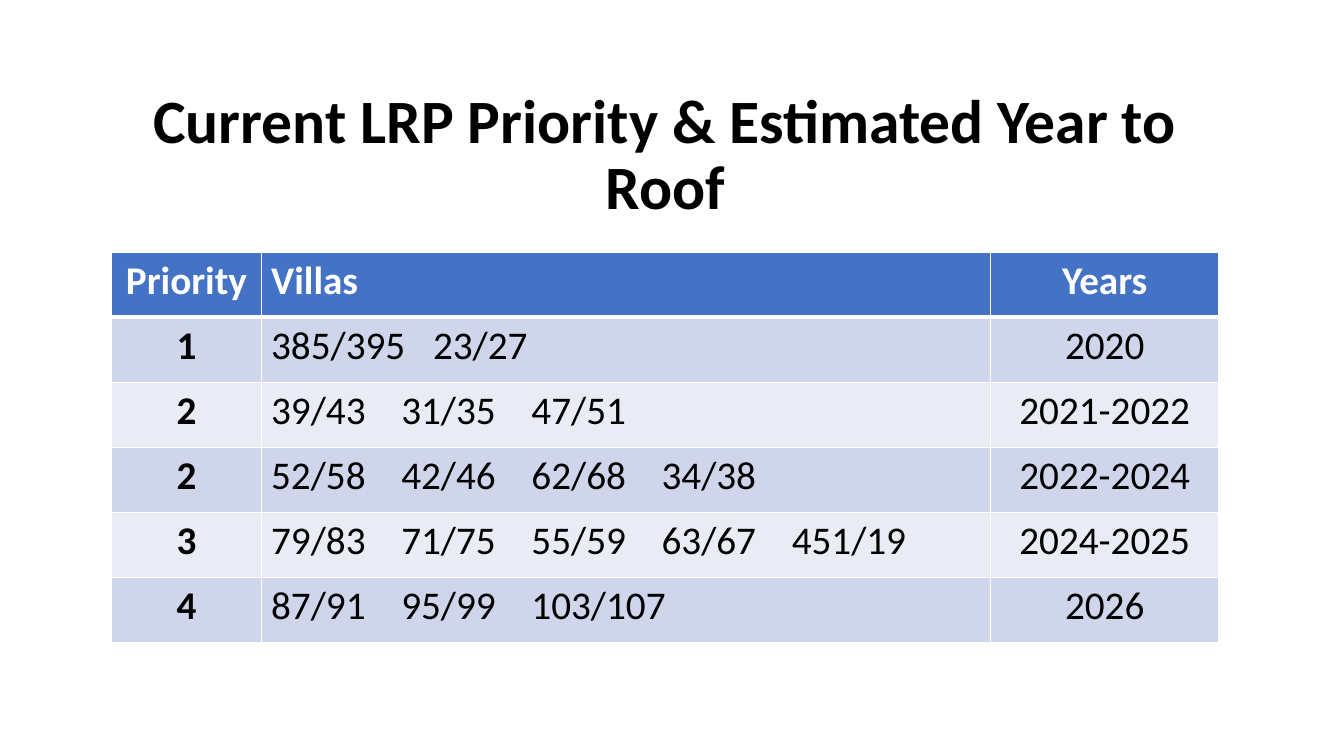
import dataclasses

import lxml.etree
import pptx
import pptx.dml.color
import pptx.enum.text
import pptx.oxml.ns
import pptx.table
import pptx.text.text
import pptx.util

Cm = pptx.util.Cm
Pt = pptx.util.Pt
ALIGN = pptx.enum.text.PP_ALIGN

FONT = "Calibri"
COLOURS = {
    "text": "000000",
    "white": "FFFFFF",
    "header": "4472C4",
    "odd row": "CFD5EA",
    "even row": "E9EBF5",
}
COLUMN_WIDTHS = (3.76, 18.39, 5.74)
ROW_HEIGHT = 1.64
VILLA_STEP = 3.28


@dataclasses.dataclass
class PriorityRow:
    priority: str
    villas: tuple[str, ...]
    years: str
    villa_step: float = VILLA_STEP


ROWS = (
    PriorityRow("Priority", ("Villas",), "Years"),
    PriorityRow("1", ("385/395", "23/27"), "2020", 4.08),
    PriorityRow("2", ("39/43", "31/35", "47/51"), "2021-2022"),
    PriorityRow("2", ("52/58", "42/46", "62/68", "34/38"), "2022-2024"),
    PriorityRow("3", ("79/83", "71/75", "55/59", "63/67", "451/19"), "2024-2025"),
    PriorityRow("4", ("87/91", "95/99", "103/107"), "2026"),
)


def rgb(name: str) -> pptx.dml.color.RGBColor:
    return pptx.dml.color.RGBColor.from_string(COLOURS[name])


def add_element(parent: lxml.etree._Element, tag: str, **attributes: str) -> lxml.etree._Element:
    element = lxml.etree.SubElement(parent, pptx.oxml.ns.qn(tag))
    for key, value in attributes.items():
        element.set(key, value)
    return element


def format_paragraph(paragraph: pptx.text.text._Paragraph, size: float, colour: str,
                     bold: bool, alignment: ALIGN) -> None:
    paragraph.alignment = alignment
    paragraph.font.name = FONT
    paragraph.font.size = Pt(size)
    paragraph.font.bold = bold
    paragraph.font.color.rgb = rgb(colour)


def set_borders(cell: pptx.table._Cell, top: float, bottom: float) -> None:
    properties = cell._tc.get_or_add_tcPr()
    for side, width in (("L", 1), ("R", 1), ("T", top), ("B", bottom)):
        line = add_element(properties, f"a:ln{side}", w=str(Pt(width)))
        add_element(add_element(line, "a:solidFill"), "a:srgbClr", val=COLOURS["white"])


def set_tab_stops(paragraph: pptx.text.text._Paragraph, count: int, step: float) -> None:
    tab_list = add_element(paragraph._p.get_or_add_pPr(), "a:tabLst")
    for stop in range(1, count + 1):
        add_element(tab_list, "a:tab", pos=str(Cm(step * stop)), algn="l")


def fill_row(table: pptx.table.Table, index: int, row: PriorityRow) -> None:
    is_header = index == 0
    fill = "header" if is_header else "odd row" if index % 2 else "even row"
    colour = "white" if is_header else "text"
    texts = (row.priority, "\t".join(row.villas), row.years)
    for column, text in enumerate(texts):
        cell = table.cell(index, column)
        set_borders(cell, top=3 if index == 1 else 1, bottom=3 if is_header else 1)
        cell.fill.solid()
        cell.fill.fore_color.rgb = rgb(fill)
        cell.text = text
        paragraph = cell.text_frame.paragraphs[0]
        alignment = ALIGN.LEFT if column == 1 else ALIGN.CENTER
        format_paragraph(paragraph, 28, colour, is_header or column == 0, alignment)
        if column == 1 and len(row.villas) > 1:
            set_tab_stops(paragraph, len(row.villas) - 1, row.villa_step)


def main() -> None:
    presentation = pptx.Presentation()
    presentation.slide_width = Cm(33.87)
    presentation.slide_height = Cm(19.05)
    slide = presentation.slides.add_slide(presentation.slide_layouts[5])

    # Title
    title = slide.shapes.title
    title.left, title.top, title.width, title.height = Cm(2.16), Cm(2.11), Cm(29.21), Cm(3.68)
    title.text_frame.text = "Current LRP Priority & Estimated Year to Roof"
    title.text_frame.word_wrap = True
    title.text_frame.auto_size = pptx.enum.text.MSO_AUTO_SIZE.NONE
    title.text_frame.vertical_anchor = pptx.enum.text.MSO_ANCHOR.MIDDLE
    heading = title.text_frame.paragraphs[0]
    format_paragraph(heading, 44, "text", True, ALIGN.CENTER)
    heading.line_spacing = 0.9

    # Priority table
    table = slide.shapes.add_table(
        len(ROWS), len(COLUMN_WIDTHS), Cm(2.82), Cm(6.35),
        Cm(sum(COLUMN_WIDTHS)), Cm(ROW_HEIGHT * len(ROWS))).table
    for column, width in zip(table.columns, COLUMN_WIDTHS):
        column.width = Cm(width)
    for index, row in enumerate(ROWS):
        table.rows[index].height = Cm(ROW_HEIGHT)
        fill_row(table, index, row)

    presentation.save("out.pptx")


if __name__ == "__main__":
    main()
